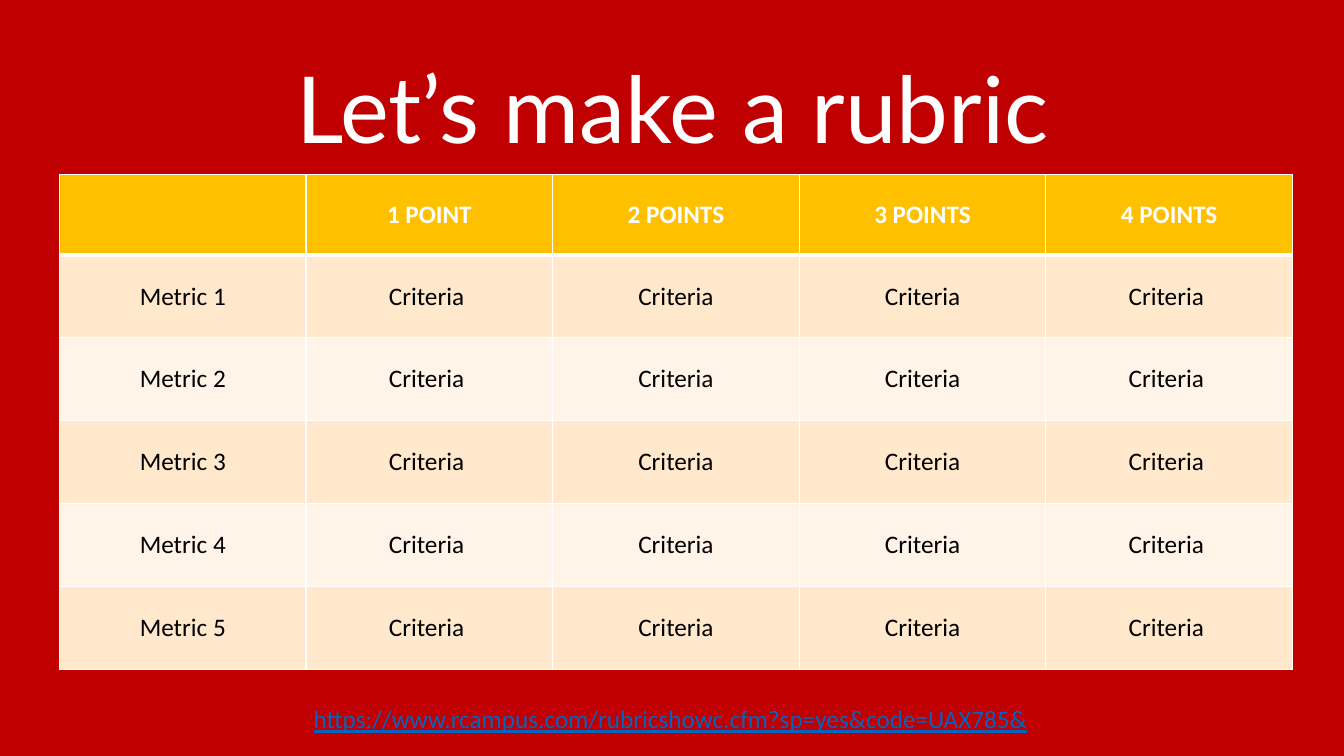
"""Build the rubric slide: a title, a table of metrics by points, and a web address."""
from lxml.etree import SubElement
from pptx import Presentation
from pptx.dml.color import RGBColor
from pptx.enum.text import MSO_ANCHOR, PP_ALIGN
from pptx.oxml.ns import qn
from pptx.util import Inches, Pt

TITLE = "Let’s make a rubric"
ADDRESS = "https://www.rcampus.com/rubricshowc.cfm?sp=yes&code=UAX785&"
HEADER = ["", "1 POINT", "2 POINTS", "3 POINTS", "4 POINTS"]
CRITERIA = ["Criteria ", "Criteria", "Criteria", "Criteria "]
ROWS = [HEADER] + [[f"Metric {n}"] + CRITERIA for n in range(1, 6)]

RED, GOLD, WHITE, BLACK, BLUE = "C00000", "FFC000", "FFFFFF", "000000", "0563C1"
BANDS = ["FFF4E7", "FFE8CC"]
TITLE_BOX = (0.92, 0.4, 11.5, 1.45)
TABLE_BOX = (0.59, 1.73, 12.23, 4.91)
ADDRESS_BOX = (2.19, 6.93, 8.92, 0.4)
HEADER_HEIGHT = 0.8

TITLE_FONT = {"name": "Lato", "size": Pt(66)}
BODY_FONT = {"name": "Calibri", "size": Pt(18)}


def rgb(value):
    return RGBColor.from_string(value)


def box(values):
    return [Inches(v) for v in values]


def write(tf, text, color, font):
    p = tf.paragraphs[0]
    p.alignment = PP_ALIGN.CENTER
    r = p.add_run()
    r.text = text
    r.font.color.rgb = rgb(color)
    for name, value in font.items():
        setattr(r.font, name, value)
    return p


def add_borders(cell, widths):
    tc_pr = cell._tc.get_or_add_tcPr()
    for side, width in widths.items():
        line = SubElement(tc_pr, qn(f"a:ln{side}"), w=str(Pt(width)))
        fill = SubElement(line, qn("a:solidFill"))
        SubElement(fill, qn("a:srgbClr"), val=WHITE)


def add_title(s):
    sp = s.shapes.title
    sp.left, sp.top, sp.width, sp.height = box(TITLE_BOX)
    tf = sp.text_frame
    tf.vertical_anchor = MSO_ANCHOR.MIDDLE
    p = write(tf, TITLE, WHITE, TITLE_FONT)
    p.line_spacing = 0.9


def add_rubric(s):
    table = s.shapes.add_table(len(ROWS), len(HEADER), *box(TABLE_BOX)).table
    body_height = (TABLE_BOX[3] - HEADER_HEIGHT) / (len(ROWS) - 1)
    for i, texts in enumerate(ROWS):
        is_header = i == 0
        table.rows[i].height = Inches(HEADER_HEIGHT if is_header else body_height)
        widths = {"L": 1, "R": 1, "T": 3 if i == 1 else 1, "B": 3 if is_header else 1}
        for j, text in enumerate(texts):
            cell = table.cell(i, j)
            add_borders(cell, widths)
            cell.fill.solid()
            cell.fill.fore_color.rgb = rgb(GOLD if is_header else BANDS[i % 2])
            cell.vertical_anchor = MSO_ANCHOR.MIDDLE
            if text:
                write(cell.text_frame, text, WHITE if is_header else BLACK,
                      {**BODY_FONT, "bold": is_header})


def add_address(s):
    tf = s.shapes.add_textbox(*box(ADDRESS_BOX)).text_frame
    tf.word_wrap = True
    write(tf, ADDRESS, BLUE, {**BODY_FONT, "underline": True})


def main():
    prs = Presentation()
    prs.slide_width, prs.slide_height = box((13.33, 7.5))
    s = prs.slides.add_slide(prs.slide_layouts[5])
    s.background.fill.solid()
    s.background.fill.fore_color.rgb = rgb(RED)
    add_address(s)
    add_title(s)
    add_rubric(s)
    prs.save("out.pptx")


if __name__ == "__main__":
    main()
